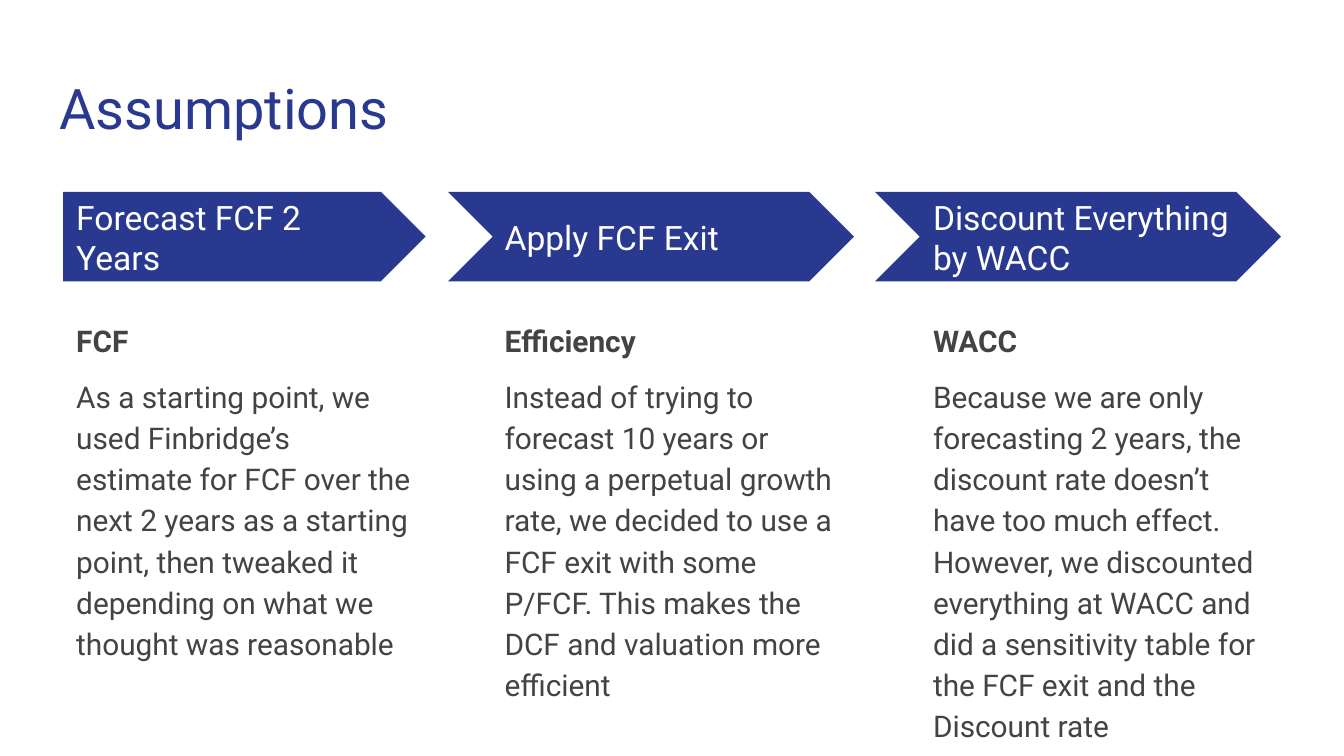
from pptx import Presentation
from pptx.dml.color import RGBColor
from pptx.enum.shapes import MSO_SHAPE as Preset
from pptx.enum.text import MSO_ANCHOR as Anchor, PP_ALIGN as Align
from pptx.util import Pt

EMU_PER_PX = 9525
NAVY = RGBColor(0x2A, 0x39, 0x90)
GREY = RGBColor(0x43, 0x43, 0x43)
WHITE = RGBColor(0xFF, 0xFF, 0xFF)

TITLE_FONT = {"size": Pt(30), "color": NAVY}
STEP_FONT = {"size": Pt(18), "color": WHITE}
HEADING_FONT = {"size": Pt(16), "color": GREY, "bold": True}
BODY_FONT = {"size": Pt(16), "color": GREY}
HEADING_SPACING = {"line_spacing": 1.15}
BODY_SPACING = {"line_spacing": 1.15, "space_before": Pt(8), "space_after": Pt(8)}
FRAME_FORMAT = {
    "word_wrap": True,
    "margin_left": Pt(7.2), "margin_right": Pt(7.2),
    "margin_top": Pt(7.2), "margin_bottom": Pt(7.2),
}

COLUMN_PITCH = 306
FIRST_ARROW = (Preset.PENTAGON, 0, 259)
COLUMNS = [
    (
        FIRST_ARROW,
        "Forecast FCF 2 Years",
        "FCF",
        "As a starting point, we used Finbridge’s estimate for FCF over the next "
        "2 years as a starting point, then tweaked it depending on what we thought "
        "was reasonable",
    ),
    (
        (Preset.CHEVRON, 31, 290),
        "Apply FCF Exit",
        "Efficiency",
        "Instead of trying to forecast 10 years or using a perpetual growth rate, "
        "we decided to use a FCF exit with some P/FCF. This makes the DCF and "
        "valuation more efficient",
    ),
    (
        (Preset.CHEVRON, 32, 290),
        "Discount Everything by WACC",
        "WACC",
        "Because we are only forecasting 2 years, the discount rate doesn’t have "
        "too much effect. However, we discounted everything at WACC and did a "
        "sensitivity table for the FCF exit and the Discount rate",
    ),
]


def px(*lengths):
    return [length * EMU_PER_PX for length in lengths]


def set_values(target, values):
    for name, value in values.items():
        if name == "color":
            target.color.rgb = value
        else:
            setattr(target, name, value)


def add_text(slide, box, paragraphs, anchor=Anchor.TOP):
    frame = slide.shapes.add_textbox(*px(*box)).text_frame
    set_values(frame, {**FRAME_FORMAT, "vertical_anchor": anchor})
    for index, (text, font, spacing) in enumerate(paragraphs):
        paragraph = frame.add_paragraph() if index else frame.paragraphs[0]
        set_values(paragraph, {"alignment": Align.LEFT, **spacing})
        run = paragraph.add_run()
        run.text = text
        set_values(run.font, {"name": "Roboto", **font})


def add_arrow(slide, box, preset):
    arrow = slide.shapes.add_shape(preset, *px(*box))
    arrow.adjustments[0] = 0.5
    arrow.shadow.inherit = False
    arrow.fill.solid()
    arrow.fill.fore_color.rgb = NAVY
    arrow.line.fill.background()


def add_column(slide, box, arrow, step, heading, body):
    left, top, width, height = box
    preset, notch, arrow_width = arrow
    add_arrow(slide, (left - notch, top, arrow_width, 64), preset)
    add_text(slide, (left, top + 16, width - 22, 33),
             [(step, STEP_FONT, {})], Anchor.MIDDLE)
    add_text(slide, (left, top + 80, width, height - 80),
             [(heading, HEADING_FONT, HEADING_SPACING),
              (body, BODY_FONT, BODY_SPACING)])


def build_assumptions(presentation):
    slide = presentation.slides.add_slide(presentation.slide_layouts[6])
    slide.background.fill.solid()
    slide.background.fill.fore_color.rgb = WHITE
    add_text(slide, (33, 43, 895, 63), [("Assumptions", TITLE_FONT, {})])
    for index, column in enumerate(COLUMNS):
        left = 45 + index * COLUMN_PITCH
        add_column(slide, (left, 137, 259, 358), *column)


def main():
    presentation = Presentation()
    presentation.slide_width, presentation.slide_height = px(960, 540)
    build_assumptions(presentation)
    presentation.save("out.pptx")


if __name__ == "__main__":
    main()
